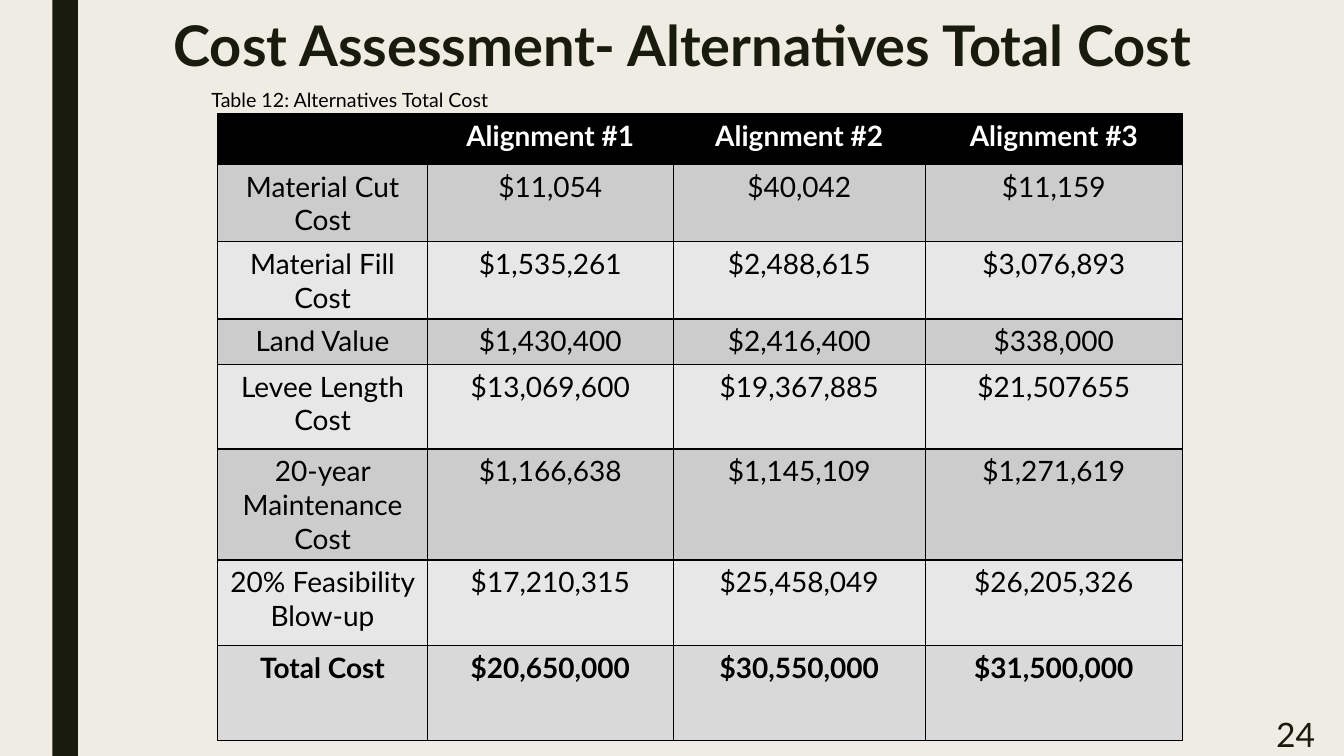
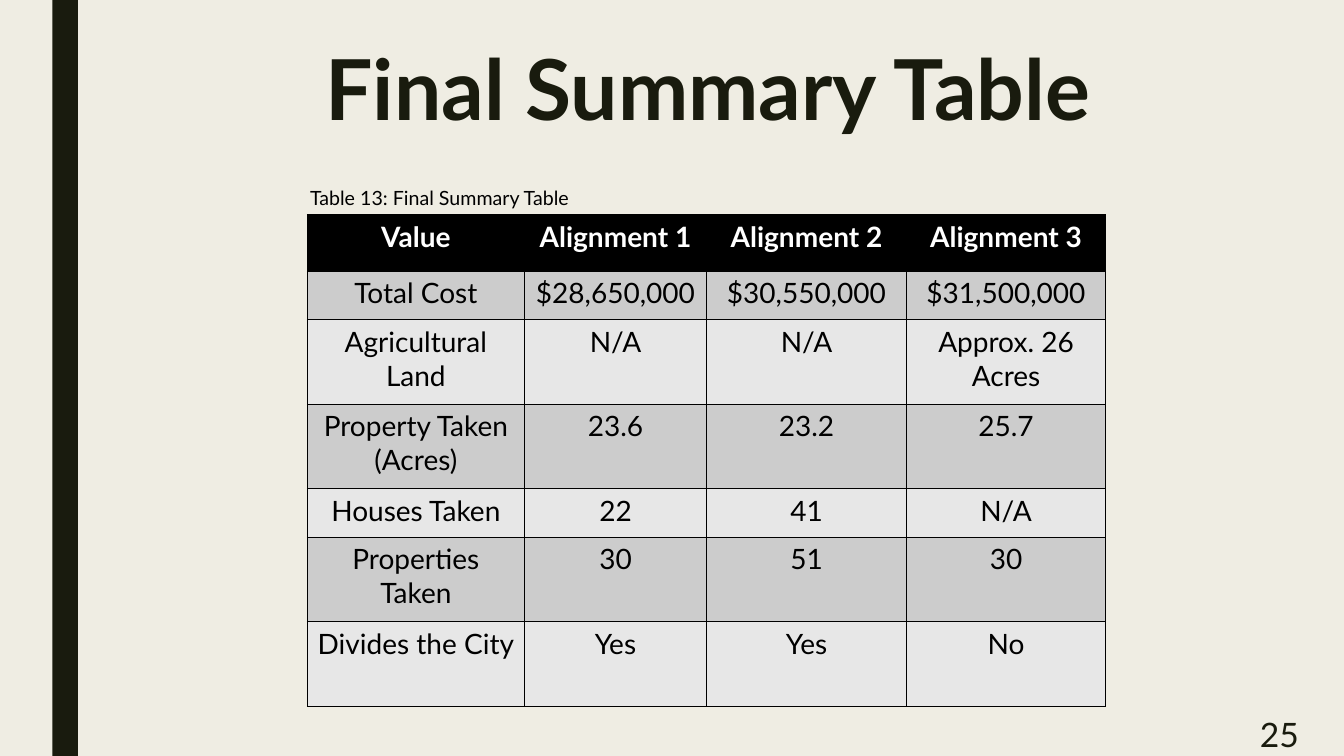
from pptx import Presentation
from pptx import util as u
from pptx.dml import color
from pptx.enum import shapes, text
from pptx.oxml import parse_xml, ns

HUES = {
    "page": "EFEDE3", "ink": "191B0E", "black": "000000", "white": "FFFFFF",
    "dark": "CCCCCC", "light": "E7E7E7", "total": "D9D9D9",
}
MID, RIGHT = text.PP_ALIGN.CENTER, text.PP_ALIGN.RIGHT
TOP, CENTER = text.MSO_ANCHOR.TOP, text.MSO_ANCHOR.MIDDLE


class Deck:
    font = "Lato"

    def __init__(self):
        self.show = Presentation()
        self.show.slide_width = u.Inches(13.33)
        self.show.slide_height = u.Inches(7.5)
        self.slide = None

    def wide(self, share):
        return u.Emu(round(self.show.slide_width * share / 100))

    def high(self, share):
        return u.Emu(round(self.show.slide_height * share / 100))

    def box(self, left, top, width, height):
        return self.wide(left), self.high(top), self.wide(width), self.high(height)

    def paint(self, fill, hue):
        fill.solid()
        fill.fore_color.rgb = color.RGBColor.from_string(HUES[hue])

    def page(self):
        self.slide = self.show.slides.add_slide(self.show.slide_layouts[6])
        self.paint(self.slide.background.fill, "page")
        band = self.slide.shapes.add_shape(
            shapes.MSO_SHAPE.RECTANGLE, *self.box(3.9, 0, 1.9, 100))
        band.shadow.inherit = False
        self.paint(band.fill, "ink")
        band.line.fill.background()

    def words(self, frame, line, size, hue, bold=False, align=MID):
        para = frame.paragraphs[0]
        para.alignment = align
        run = para.add_run()
        run.text = line
        run.font.name = self.font
        run.font.size = u.Pt(size)
        run.font.bold = bold
        run.font.color.rgb = color.RGBColor.from_string(HUES[hue])
        return para

    def label(self, spot, line, size, hue, bold=False, align=MID, anchor=TOP):
        frame = self.slide.shapes.add_textbox(*self.box(*spot)).text_frame
        frame.word_wrap = True
        frame.vertical_anchor = anchor
        return self.words(frame, line, size, hue, bold, align)

    def title(self, spot, line, size):
        self.label(spot, line, size, "ink", True).line_spacing = 0.89

    def note(self, left, top, width, line):
        self.label((left, top, width, 4.53), line, 14, "black")

    def number(self, left, line):
        self.label((left, 94.13, 13.13, 5.87), line, 24, "ink",
                   align=RIGHT, anchor=CENTER)

    def edge(self, cell):
        props = cell._tc.get_or_add_tcPr()
        for side in ("lnL", "lnR", "lnT", "lnB"):
            props.append(parse_xml(
                f'<a:{side} {ns.nsdecls("a")} w="12700"><a:solidFill>'
                f'<a:srgbClr val="{HUES["black"]}"/></a:solidFill></a:{side}>'))

    def table(self, left, top, cols, rows, data, total=False):
        spot = self.box(left, top, sum(cols), sum(rows))
        grid = self.slide.shapes.add_table(len(rows), len(cols), *spot).table
        for col, width in zip(grid.columns, cols):
            col.width = self.wide(width)
        for row, height in zip(grid.rows, rows):
            row.height = self.high(height)
        for r, items in enumerate(data):
            head, last = r == 0, total and r == len(data) - 1
            hue = "black" if head else "total" if last else ("light", "dark")[r % 2]
            for c, item in enumerate(items):
                cell = grid.cell(r, c)
                self.edge(cell)
                self.paint(cell.fill, hue)
                if item:
                    self.words(cell.text_frame, item, 20,
                               "white" if head else "black", head or last)


def costs(deck):
    deck.page()
    deck.number(85.45, "24")
    deck.table(16.2, 15.07, (15.6, 18.3, 18.75, 19.13),
               (6.67, 10, 10, 6, 11.2, 14.4, 11.33, 12.53), (
        ("", "Alignment #1", "Alignment #2", "Alignment #3"),
        ("Material Cut Cost", "$11,054", "$40,042", "$11,159"),
        ("Material Fill Cost", "$1,535,261", "$2,488,615", "$3,076,893"),
        ("Land Value", "$1,430,400", "$2,416,400", "$338,000"),
        ("Levee Length Cost", "$13,069,600", "$19,367,885", "$21,507655"),
        ("20-year Maintenance Cost", "$1,166,638", "$1,145,109", "$1,271,619"),
        ("20% Feasibility Blow-up", "$17,210,315", "$25,458,049", "$26,205,326"),
        ("Total Cost", "$20,650,000", "$30,550,000", "$31,500,000"),
    ), total=True)
    deck.note(12, 10.93, 28.06, "Table 12: Alternatives Total Cost")
    deck.title((11.4, 1.87, 78.77, 11.07),
               "Cost Assessment- Alternatives Total Cost", 40)


def recap(deck):
    deck.page()
    deck.title((12.38, 5.73, 80.57, 16.67), "Final Summary Table", 60)
    deck.number(84.25, "25")
    deck.table(22.88, 28.4, (16.13, 13.58, 14.85, 14.85),
               (7.47, 6.4, 11.2, 11.2, 6.4, 11.2, 11.2), (
        ("Value", "Alignment 1", "Alignment 2", "Alignment 3"),
        ("Total Cost", "$28,650,000", "$30,550,000", "$31,500,000"),
        ("Agricultural Land", "N/A", "N/A", "Approx. 26 Acres"),
        ("Property Taken (Acres)", "23.6", "23.2", "25.7"),
        ("Houses Taken", "22", "41", "N/A"),
        ("Properties Taken", "30", "51", "30"),
        ("Divides the City", "Yes", "Yes", "No"),
    ))
    deck.note(22.13, 23.87, 21.16, "Table 13: Final Summary Table")


def main():
    deck = Deck()
    costs(deck)
    recap(deck)
    deck.show.save("out.pptx")


if __name__ == "__main__":
    main()
